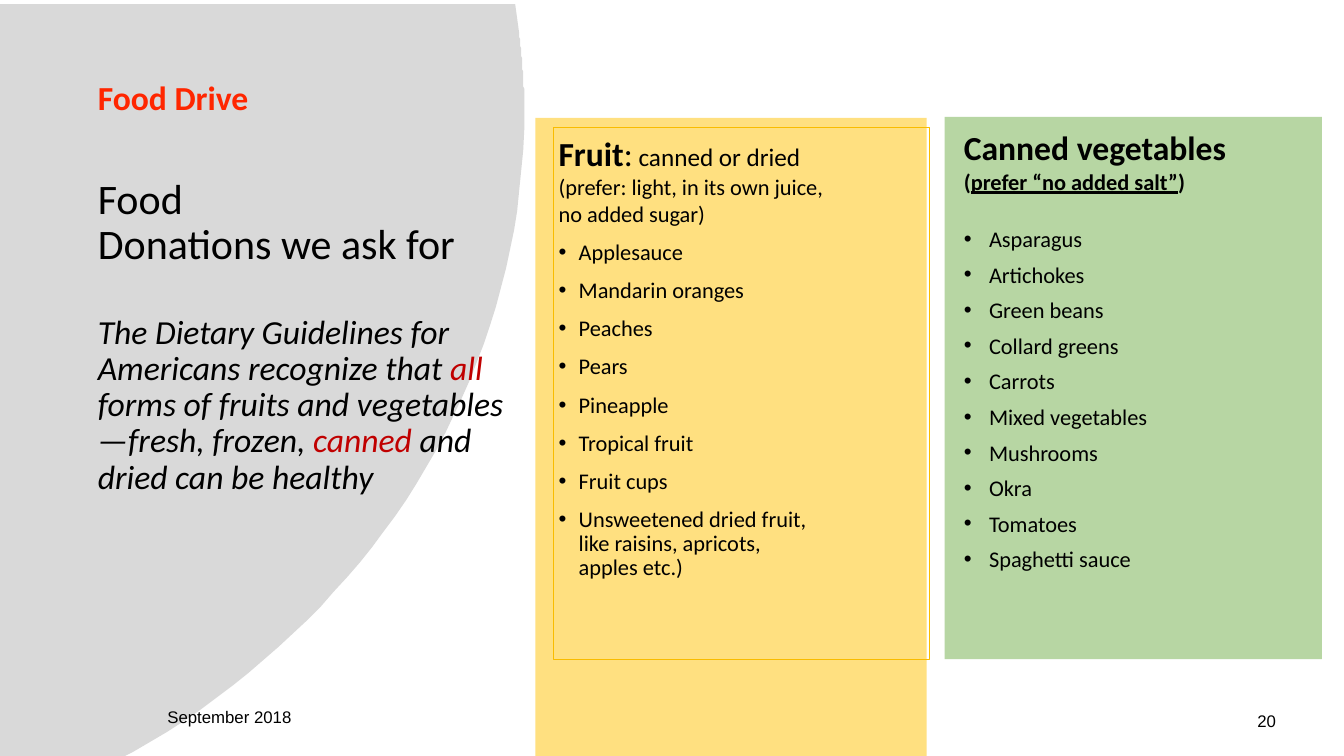
from dataclasses import dataclass

import pptx
import pptx.dml.color
import pptx.enum.shapes
import pptx.enum.text
import pptx.oxml
import pptx.oxml.ns
import pptx.util

PX = 9144  # EMU per px, 100 px to the inch
INSET = 5
TITLE_ONLY = 5


@dataclass(frozen=True)
class Theme:
    black: str = "000000"
    heading: str = "FF2600"
    emphasis: str = "C00000"
    fruit_panel: str = "FFE080"
    fruit_outline: str = "F9BC00"
    vegetable_panel: str = "B7D6A3"
    curve: str = "D9D9D9"
    text_font: str = "Calibri"
    footer_font: str = "Arial"
    large: int = 30
    heading_size: int = 24
    medium: int = 18
    item_size: int = 16
    footer_size: int = 12


THEME = Theme()


@dataclass(frozen=True)
class Box:
    left: int
    top: int
    width: int
    height: int

    def emu(self) -> list[int]:
        return [value * PX for value in (self.left, self.top, self.width, self.height)]


@dataclass(frozen=True)
class Run:
    text: str
    size: int = THEME.item_size
    color: str = THEME.black
    bold: bool = False
    italic: bool = False
    underline: bool = False
    font: str = THEME.text_font


@dataclass(frozen=True)
class Line:
    runs: tuple[Run, ...]
    spacing: float = 1.0
    before: int = 0
    indent: int = 0


FRUITS = ("Applesauce", "Mandarin oranges", "Peaches", "Pears", "Pineapple", "Tropical fruit",
          "Fruit cups", "Unsweetened dried fruit,\nlike raisins, apricots,\napples etc.)")
VEGETABLES = ("Asparagus", "Artichokes", "Green beans", "Collard greens", "Carrots",
              "Mixed vegetables", "Mushrooms", "Okra", "Tomatoes", "Spaghetti sauce")


def guideline(text: str, color: str = THEME.black) -> Run:
    return Run(text, THEME.heading_size, color, italic=True)


TITLE_LINES = (
    Line((Run("Food Drive", THEME.heading_size, THEME.heading, bold=True),), 0.9),
    Line((Run("Food", THEME.large),), 0.9, 43),
    Line((Run("Donations we ask for", THEME.large),), 0.9),
    Line((guideline("The Dietary Guidelines for Americans recognize that "),
          guideline("all ", THEME.emphasis),
          guideline("forms of fruits and vegetables—fresh, frozen, "),
          guideline("canned", THEME.emphasis),
          guideline(" and dried can be healthy")), 0.9, 33),
)
FRUIT_LINES = (
    Line((Run("Fruit", THEME.heading_size, bold=True), Run(":", THEME.heading_size),
          Run(" canned or dried", THEME.medium))),
    Line((Run("(prefer: light, in its own juice,\nno added sugar)"),)),
    *(Line((Run(fruit),), 0.9, 10, 20) for fruit in FRUITS),
)
VEGETABLE_LINES = (
    Line((Run("Canned vegetables", THEME.heading_size, bold=True),), 0.8, 10),
    Line((Run("(", bold=True), Run("prefer “no added salt”", bold=True, underline=True),
          Run(")", bold=True)), 0.8, 4),
    *(Line((Run(vegetable),), 0.8, 10 if index else 26, 25)
      for index, vegetable in enumerate(VEGETABLES)),
)


def rgb(color: str) -> pptx.dml.color.RGBColor:
    return pptx.dml.color.RGBColor.from_string(color)


def add_run(paragraph, spec: Run) -> None:
    """Add the text of a run, with a line break at each newline."""
    for index, part in enumerate(spec.text.split("\n")):
        if index:
            paragraph.add_line_break()
        run = paragraph.add_run()
        run.text = part
        font = run.font
        font.name, font.size = spec.font, pptx.util.Pt(spec.size)
        font.bold, font.italic, font.underline = spec.bold, spec.italic, spec.underline
        font.color.rgb = rgb(spec.color)


def add_bullet(paragraph, indent: int) -> None:
    properties = paragraph._p.get_or_add_pPr()
    properties.set("marL", str(indent * PX))
    properties.set("indent", str(-indent * PX))
    namespace = pptx.oxml.ns.nsdecls("a")
    for xml in (f'<a:buFont {namespace} typeface="Arial"/>', f'<a:buChar {namespace} char="•"/>'):
        properties.append(pptx.oxml.parse_xml(xml))


def write_lines(shape, lines: tuple[Line, ...], wrap: bool = True) -> None:
    frame = shape.text_frame
    frame.word_wrap = wrap
    frame.auto_size = pptx.enum.text.MSO_AUTO_SIZE.NONE
    frame.vertical_anchor = pptx.enum.text.MSO_ANCHOR.TOP
    frame.margin_left = frame.margin_right = frame.margin_top = frame.margin_bottom = INSET * PX
    for index, line in enumerate(lines):
        paragraph = frame.add_paragraph() if index else frame.paragraphs[0]
        paragraph.alignment = pptx.enum.text.PP_ALIGN.LEFT
        paragraph.line_spacing = line.spacing
        paragraph.space_before = pptx.util.Pt(line.before)
        if line.indent:
            add_bullet(paragraph, line.indent)
        for run in line.runs:
            add_run(paragraph, run)


def paint(shape, color: str) -> None:
    shape.shadow.inherit = False
    shape.fill.solid()
    shape.fill.fore_color.rgb = rgb(color)
    shape.line.fill.background()


def add_panel(slide, box: Box, color: str) -> None:
    paint(slide.shapes.add_shape(pptx.enum.shapes.MSO_SHAPE.RECTANGLE, *box.emu()), color)


def add_text(slide, box: Box, lines: tuple[Line, ...], wrap: bool = True):
    shape = slide.shapes.add_textbox(*box.emu())
    write_lines(shape, lines, wrap)
    return shape


def bezier(start, first, second, end, steps: int = 40) -> list[tuple[float, float]]:
    """Return points along a cubic curve, without its start."""
    points = []
    for step in range(1, steps + 1):
        t = step / steps
        weights = ((1 - t) ** 3, 3 * t * (1 - t) ** 2, 3 * t * t * (1 - t), t ** 3)
        points.append(tuple(sum(weight * point[axis] for weight, point in
                                zip(weights, (start, first, second, end))) for axis in (0, 1)))
    return points


def add_curved_background(slide) -> None:
    builder = slide.shapes.build_freeform(-4, 4, scale=PX)
    edge = [(511, 4), (515, 33)]
    edge += bezier((515, 33), (518, 58), (520, 84), (520, 109))
    edge += bezier((520, 109), (520, 379), (364, 615), (132, 746))
    builder.add_line_segments(edge + [(116, 754), (-4, 754)], close=True)
    paint(builder.convert_to_shape(), THEME.curve)


def place_title(slide) -> None:
    """Fill the title and bring it in front of the background."""
    title = slide.shapes.title
    title.left, title.top, title.width, title.height = Box(92, 76, 430, 380).emu()
    write_lines(title, TITLE_LINES)
    slide.shapes.element.append(title.element)


def add_footer(slide, box: Box, text: str, wrap: bool) -> None:
    run = Run(text, THEME.footer_size, font=THEME.footer_font)
    add_text(slide, box, (Line((run,)),), wrap)


def main() -> None:
    presentation = pptx.Presentation()
    presentation.slide_width, presentation.slide_height = 1333 * PX, 750 * PX
    slide = presentation.slides.add_slide(presentation.slide_layouts[TITLE_ONLY])
    add_panel(slide, Box(937, 116, 374, 538), THEME.vegetable_panel)
    add_panel(slide, Box(531, 117, 388, 641), THEME.fruit_panel)
    add_curved_background(slide)
    place_title(slide)
    add_footer(slide, Box(1242, 700, 30, 29), "20", wrap=False)
    add_footer(slide, Box(161, 696, 209, 29), "September 2018", wrap=True)
    fruit_box = add_text(slide, Box(549, 127, 373, 527), FRUIT_LINES)
    fruit_box.line.color.rgb = rgb(THEME.fruit_outline)
    fruit_box.line.width = pptx.util.Pt(0.75)
    add_text(slide, Box(951, 129, 383, 476), VEGETABLE_LINES)
    presentation.save("out.pptx")


if __name__ == "__main__":
    main()
